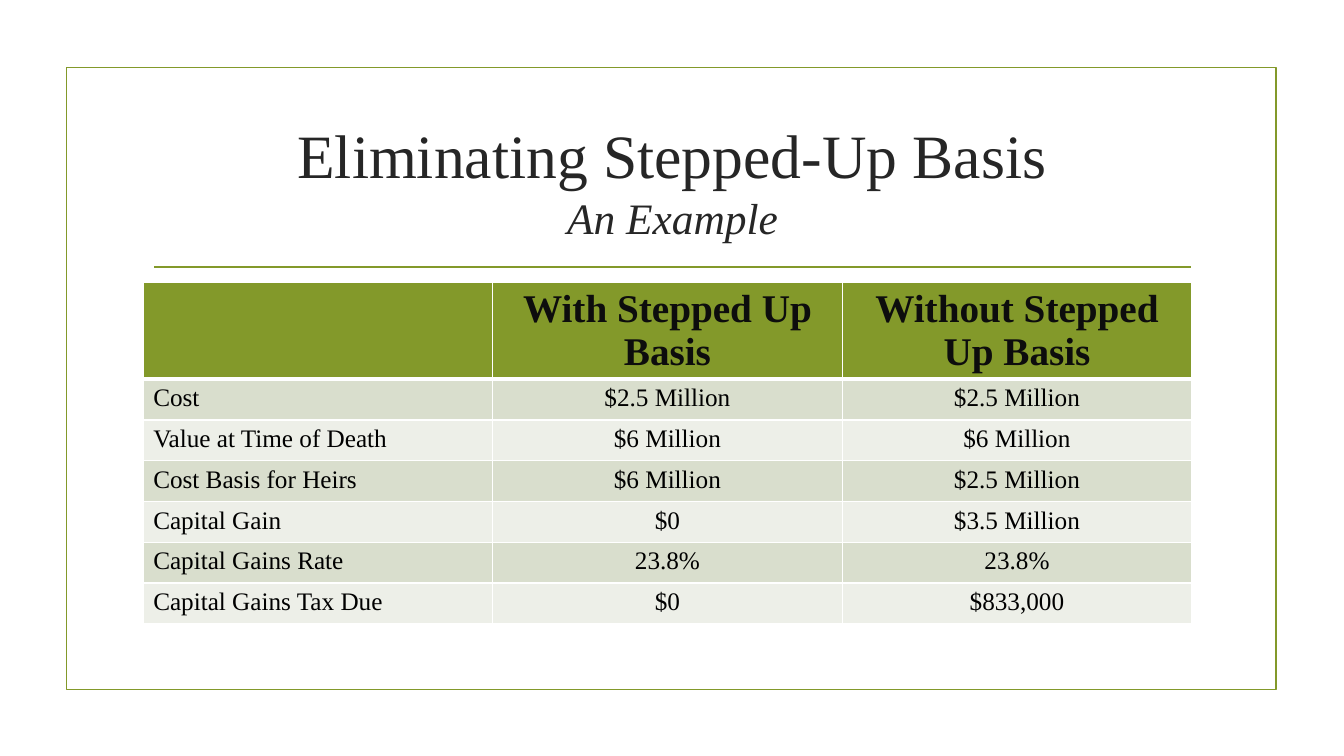
from dataclasses import dataclass

from lxml.etree import SubElement
from pptx import Presentation
from pptx.dml.color import RGBColor as Color
from pptx.enum.shapes import MSO_CONNECTOR as Connector, MSO_SHAPE as Shape
from pptx.enum.text import MSO_ANCHOR as Anchor, MSO_AUTO_SIZE as AutoSize, PP_ALIGN as Align
from pptx.oxml.ns import qn
from pptx.util import Inches, Pt


@dataclass(frozen=True)
class Theme:
    font: str = "Times New Roman"
    green: str = "83992A"
    title_ink: str = "262626"
    header_ink: str = "0D0D0D"
    body_ink: str = "000000"
    border: str = "FFFFFF"
    bands: tuple = ("D9DECD", "EDEFE8")
    title_size: int = 44
    subtitle_size: int = 31
    header_size: int = 28
    body_size: int = 18
    rule_width: float = 1.25


theme = Theme()


def style_font(font, size, color, bold=False, italic=False):
    font.name = theme.font
    font.size = Pt(size)
    font.bold = bold
    font.italic = italic
    font.color.rgb = Color.from_string(color)


def add_border(cell, side, width):
    line = SubElement(cell._tc.get_or_add_tcPr(), qn(f"a:{side}"), w=str(Pt(width)))
    fill = SubElement(line, qn("a:solidFill"))
    SubElement(fill, qn("a:srgbClr"), val=theme.border)


deck = Presentation()
deck.slide_width, deck.slide_height = Inches(13.33), Inches(7.5)
page = deck.slides.add_slide(deck.slide_layouts[5])

# Frame and rule under the title
frame = page.shapes.add_shape(Shape.RECTANGLE, Inches(0.66), Inches(0.67), Inches(12), Inches(6.17))
frame.shadow.inherit = False
frame.fill.background()
rule = page.shapes.add_connector(
    Connector.STRAIGHT, Inches(1.53), Inches(2.65), Inches(11.81), Inches(2.65))
SubElement(rule._element.spPr, qn("a:effectLst"))
for outlined in (frame, rule):
    outlined.line.color.rgb = Color.from_string(theme.green)
    outlined.line.width = Pt(theme.rule_width)

# Title with italic second line
title = page.shapes.title
title.left, title.top = Inches(1.42), Inches(1.07)
title.width, title.height = Inches(10.5), Inches(1.43)
title_text = title.text_frame
title_text.auto_size = AutoSize.NONE
title_text.vertical_anchor = Anchor.MIDDLE
title_text.text = "Eliminating Stepped-Up Basis\vAn Example"
para = title_text.paragraphs[0]
para.alignment = Align.CENTER
heading, subtitle = para.runs
style_font(heading.font, theme.title_size, theme.title_ink)
style_font(subtitle.font, theme.subtitle_size, theme.title_ink, italic=True)

# Comparison table
rows = [
    ("", "With Stepped Up Basis", "Without Stepped Up Basis"),
    ("Cost", "$2.5 Million", "$2.5 Million"),
    ("Value at Time of Death", "$6 Million", "$6 Million"),
    ("Cost Basis for Heirs", "$6 Million", "$2.5 Million"),
    ("Capital Gain", "$0", "$3.5 Million"),
    ("Capital Gains Rate", "23.8%", "23.8%"),
    ("Capital Gains Tax Due", "$0", "$833,000"),
]
header_height, body_height = Inches(0.95), Inches(2.43)
table = page.shapes.add_table(
    len(rows), len(rows[0]), Inches(1.42), Inches(2.8),
    Inches(10.4), header_height + body_height).table

for row_index, values in enumerate(rows):
    is_header = row_index == 0
    table.rows[row_index].height = header_height if is_header else body_height // (len(rows) - 1)
    fill = theme.green if is_header else theme.bands[(row_index - 1) % 2]
    size = theme.header_size if is_header else theme.body_size
    ink = theme.header_ink if is_header else theme.body_ink
    for column_index, value in enumerate(values):
        cell = table.cell(row_index, column_index)
        cell.text = value
        para = cell.text_frame.paragraphs[0]
        para.alignment = Align.CENTER if column_index else Align.LEFT
        style_font(para.font, size, ink, bold=is_header)
        for span in para.runs:
            style_font(span.font, size, ink, bold=is_header)
        for side in ("lnL", "lnR", "lnT", "lnB"):
            thick = (side == "lnB" and is_header) or (side == "lnT" and row_index == 1)
            add_border(cell, side, 3 if thick else 1)
        cell.fill.solid()
        cell.fill.fore_color.rgb = Color.from_string(fill)

deck.save("out.pptx")
